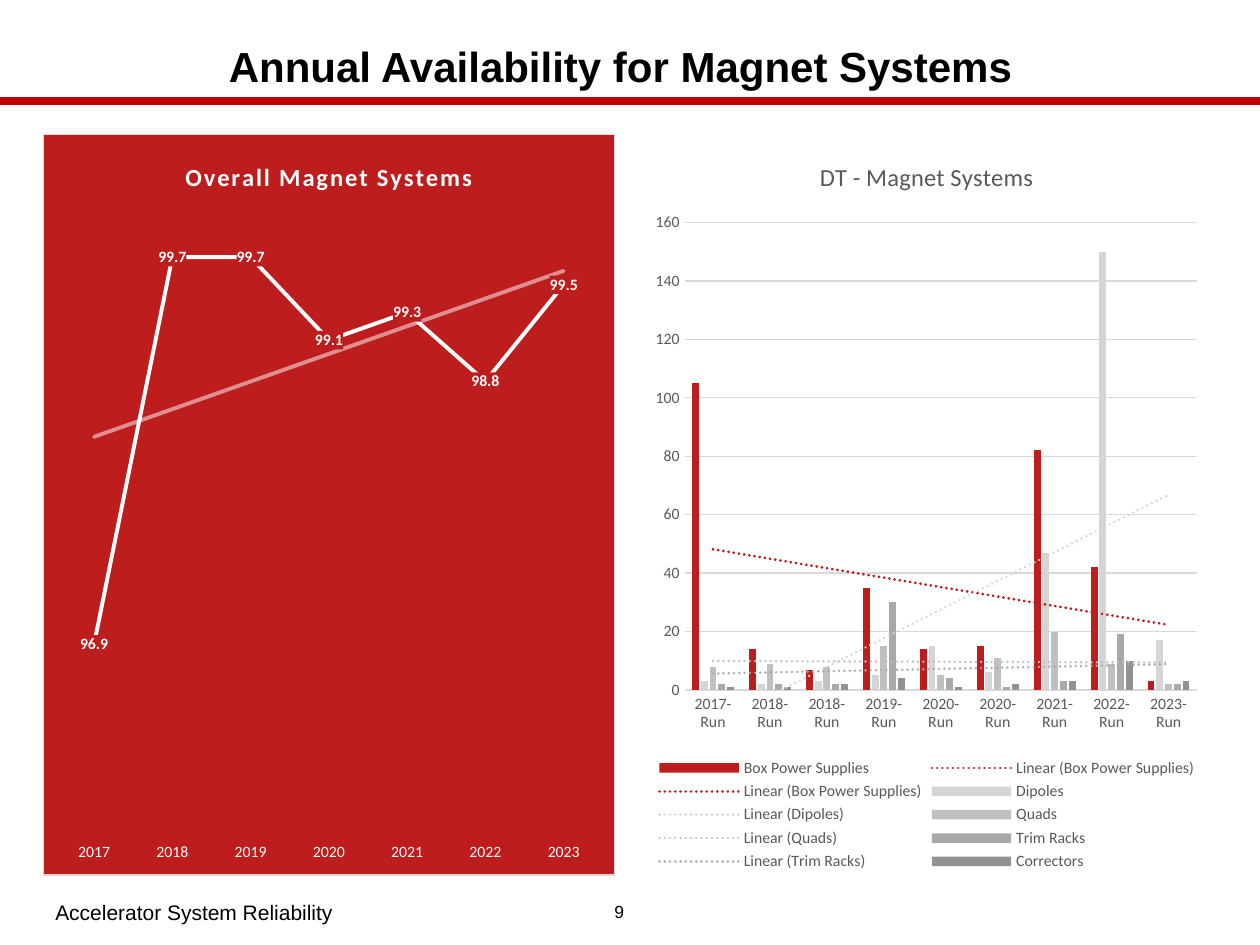
from dataclasses import dataclass
from typing import Any

import lxml.etree
import pptx
import pptx.chart.data
import pptx.dml.color
import pptx.enum.chart
import pptx.enum.shapes
import pptx.enum.text
import pptx.oxml
import pptx.oxml.ns
import pptx.util
from pptx.util import Inches, Pt

COLORS = {
    "black": "000000", "white": "FFFFFF", "rule": "C00000", "red": "BE1D1D",
    "grid": "D9D9D9", "label": "595959", "dipoles": "D5D5D5",
    "quads": "C0C0C0", "racks": "A9A9A9", "correctors": "929292",
}
NAMESPACES = pptx.oxml.ns.nsdecls("c", "a")
qn = pptx.oxml.ns.qn


@dataclass
class TextItem:
    text: str
    left: float
    top: float
    width: float
    height: float
    size: int
    bold: bool = False
    centered: bool = False


@dataclass
class Downtime:
    name: str
    color: str
    values: tuple[int, ...]
    trends: int = 1


@dataclass
class PlotArea:
    left: float
    top: float
    width: float
    height: float


TEXTS = [
    TextItem("Annual Availability for Magnet Systems", 0.34, 0.26, 9.17, 0.53, 24, True, True),
    TextItem("Accelerator System Reliability", 0.34, 7.07, 4.28, 0.34, 12),
    TextItem("9", 4.62, 7.07, 0.59, 0.33, 10, centered=True),
]
YEARS = [str(year) for year in range(2017, 2024)]
AVAILABILITY = (96.9, 99.7, 99.7, 99.1, 99.3, 98.8, 99.5)
RUNS = [f"{year}-Run" for year in (2017, 2018, 2018, 2019, 2020, 2020, 2021, 2022, 2023)]
DOWNTIMES = [
    Downtime("Box Power Supplies", "red", (105, 14, 7, 35, 14, 15, 82, 42, 3), 2),
    Downtime("Dipoles", "dipoles", (3, 2, 3, 5, 15, 6, 47, 150, 17)),
    Downtime("Quads", "quads", (8, 9, 8, 15, 5, 11, 20, 9, 2)),
    Downtime("Trim Racks", "racks", (2, 2, 2, 30, 4, 1, 3, 19, 2)),
    Downtime("Correctors", "correctors", (1, 1, 2, 4, 1, 2, 3, 10, 3), 0),
]


def rgb(color: str) -> pptx.dml.color.RGBColor:
    return pptx.dml.color.RGBColor.from_string(COLORS[color])


def set_font(font: Any, name: str, size: float, color: str, bold: bool = False) -> None:
    font.name, font.size, font.bold = name, Pt(size), bold
    font.color.rgb = rgb(color)


def add_text(slide: Any, item: TextItem) -> None:
    shape = slide.shapes.add_textbox(
        Inches(item.left), Inches(item.top), Inches(item.width), Inches(item.height))
    frame = shape.text_frame
    frame.word_wrap = True
    frame.vertical_anchor = pptx.enum.text.MSO_ANCHOR.MIDDLE
    paragraph = frame.paragraphs[0]
    paragraph.text = item.text
    if item.centered:
        paragraph.alignment = pptx.enum.text.PP_ALIGN.CENTER
    set_font(paragraph.font, "Arial", item.size, "black", item.bold)


def add_rule(slide: Any) -> None:
    rule = slide.shapes.add_connector(
        pptx.enum.shapes.MSO_CONNECTOR.STRAIGHT, Inches(0), Inches(0.8), Inches(10), Inches(0.8))
    rule.line.color.rgb = rgb("rule")
    rule.line.width = Pt(4.5)
    lxml.etree.SubElement(rule._element.spPr, qn("a:effectLst"))


def fill_properties(color: str, border: str = "") -> Any:
    outline = (f'<a:ln w="{Pt(0.75)}"><a:solidFill><a:srgbClr val="{COLORS[border]}"/>'
               '</a:solidFill></a:ln>') if border else ""
    return pptx.oxml.parse_xml(
        f'<c:spPr {NAMESPACES}><a:solidFill><a:srgbClr val="{COLORS[color]}"/>'
        f'</a:solidFill>{outline}</c:spPr>')


def add_trend(series: Any, color: str, width: float, dash: str, opacity: int = 100) -> None:
    trend = pptx.oxml.parse_xml(
        f'<c:trendline {NAMESPACES}><c:spPr><a:ln w="{Pt(width)}" cap="rnd"><a:solidFill>'
        f'<a:srgbClr val="{COLORS[color]}"><a:alpha val="{opacity * 1000}"/></a:srgbClr>'
        f'</a:solidFill><a:prstDash val="{dash}"/></a:ln></c:spPr>'
        '<c:trendlineType val="linear"/><c:dispRSqr val="0"/><c:dispEq val="0"/></c:trendline>')
    series._element.find(qn("c:cat")).addprevious(trend)


def set_plot_area(chart: Any, area: PlotArea) -> None:
    plot_area = chart._chartSpace.chart.plotArea
    for layout in plot_area.findall(qn("c:layout")):
        plot_area.remove(layout)
    plot_area.insert(0, pptx.oxml.parse_xml(
        f'<c:layout {NAMESPACES}><c:manualLayout><c:layoutTarget val="inner"/>'
        '<c:xMode val="edge"/><c:yMode val="edge"/>'
        f'<c:x val="{area.left}"/><c:y val="{area.top}"/>'
        f'<c:w val="{area.width}"/><c:h val="{area.height}"/></c:manualLayout></c:layout>'))


def add_chart(slide: Any, kind: Any, left: float, width: float, title: str, color: str,
              bold: bool, categories: list[str], series: list[tuple], area: PlotArea) -> Any:
    data = pptx.chart.data.CategoryChartData()
    data.categories = categories
    for name, values in series:
        data.add_series(name, values)
    chart = slide.shapes.add_chart(
        kind, Inches(left), Inches(1.06), Inches(width), Inches(5.89), data).chart
    set_font(chart.font, "Calibri", 10, "black")
    chart.has_title = True
    paragraph = chart.chart_title.text_frame.paragraphs[0]
    paragraph.text = title
    set_font(paragraph.font, "Calibri", 14, color, bold)
    chart.chart_title.include_in_layout = False
    chart.plots[0].vary_by_categories = False
    for axis in (chart.category_axis, chart.value_axis):
        axis.major_tick_mark = pptx.enum.chart.XL_TICK_MARK.NONE
        axis.format.line.fill.background()
        set_font(axis.tick_labels.font, "Calibri", 9, color)
    set_plot_area(chart, area)
    return chart


def add_availability_chart(slide: Any) -> None:
    chart = add_chart(
        slide, pptx.enum.chart.XL_CHART_TYPE.LINE, 0.34, 4.54, "Overall Magnet Systems", "white",
        True, YEARS, [("Series 1", AVAILABILITY)], PlotArea(0.02, 0.11, 0.96, 0.84))
    chart.has_legend = False
    title_font = chart.chart_title.text_frame.paragraphs[0].font
    title_font._element.set("spc", "100")
    chart._chartSpace.find(qn("c:txPr")).addprevious(fill_properties("red", "grid"))
    axis = chart.value_axis
    axis.visible = False
    axis.has_major_gridlines = False
    axis.minimum_scale, axis.maximum_scale = 95.5, 100
    series = chart.plots[0].series[0]
    series.smooth = False
    series.marker.style = pptx.enum.chart.XL_MARKER_STYLE.NONE
    series.format.line.color.rgb = rgb("white")
    series.format.line.width = Pt(2.25)
    # Labels sit on the line, over a patch of the panel colour
    labels = series.data_labels
    labels.show_value = True
    labels.number_format, labels.number_format_is_linked = "0.0", False
    labels.position = pptx.enum.chart.XL_LABEL_POSITION.CENTER
    set_font(labels.font, "Calibri", 9, "white", True)
    labels._element.find(qn("c:txPr")).addprevious(fill_properties("red"))
    add_trend(series, "white", 2.25, "solid", 50)


def add_downtime_chart(slide: Any) -> None:
    chart = add_chart(
        slide, pptx.enum.chart.XL_CHART_TYPE.COLUMN_CLUSTERED, 5.12, 4.47, "DT - Magnet Systems",
        "label", False, RUNS, [(item.name, item.values) for item in DOWNTIMES],
        PlotArea(0.07, 0.12, 0.91, 0.63))
    chart.plots[0].gap_width, chart.plots[0].overlap = 219, -27
    axis = chart.value_axis
    axis.minimum_scale, axis.maximum_scale, axis.major_unit = 0, 160, 20
    for line in (axis.major_gridlines.format.line, chart.category_axis.format.line):
        line.color.rgb = rgb("grid")
        line.width = Pt(0.75)
    for series, item in zip(chart.plots[0].series, DOWNTIMES):
        series.format.fill.solid()
        series.format.fill.fore_color.rgb = rgb(item.color)
        series.invert_if_negative = False
        for _ in range(item.trends):
            add_trend(series, item.color, 1.5, "sysDot")
    chart.has_legend = True
    chart.legend.position = pptx.enum.chart.XL_LEGEND_POSITION.BOTTOM
    chart.legend.include_in_layout = False
    set_font(chart.legend.font, "Calibri", 9, "label")


def main() -> None:
    presentation = pptx.Presentation()
    presentation.slide_width, presentation.slide_height = Inches(10), Inches(7.5)
    slide = presentation.slides.add_slide(presentation.slide_layouts[6])
    # Heading, footer and page number
    add_rule(slide)
    for item in TEXTS:
        add_text(slide, item)
    # Charts
    add_availability_chart(slide)
    add_downtime_chart(slide)
    presentation.save("out.pptx")


if __name__ == "__main__":
    main()
